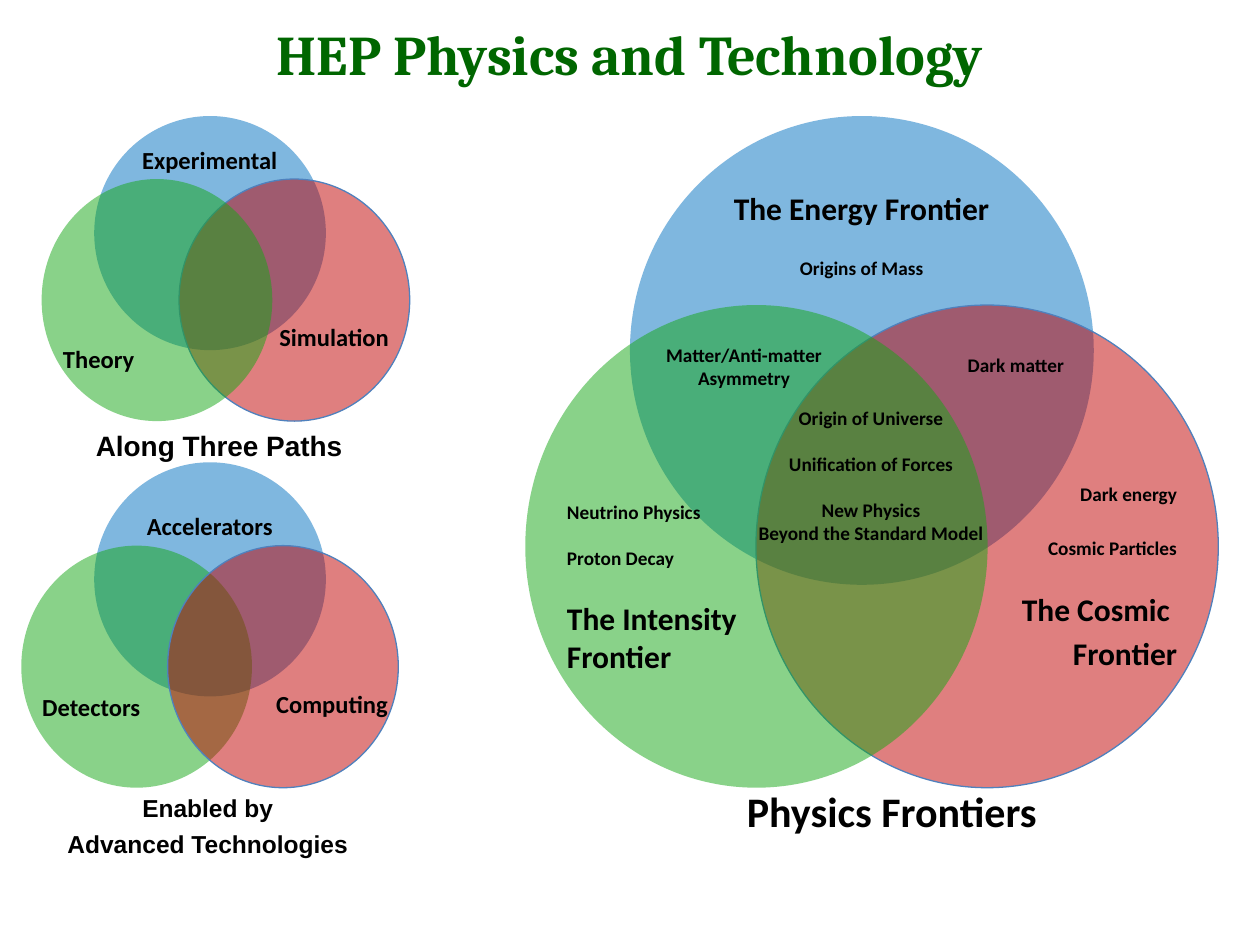
from dataclasses import dataclass

import lxml.etree
import pptx
import pptx.dml.color
import pptx.enum.shapes
import pptx.enum.text
import pptx.oxml.ns
import pptx.util

Cm = pptx.util.Cm
Pt = pptx.util.Pt
Align = pptx.enum.text.PP_ALIGN

BLUE, RED, GREEN = "0070C0", "C00000", "15A715"
BLACK, WHITE, OUTLINE, TITLE_GREEN = "000000", "FFFFFF", "4F81BD", "006600"


@dataclass
class Circle:
    color: str
    left: float
    top: float


@dataclass
class Venn:
    blue_size: tuple[float, float]
    other_size: tuple[float, float]
    circles: list[Circle]


@dataclass
class Line:
    text: str
    size: float
    before: float = 0


@dataclass
class Label:
    x: float
    middle: float
    width: float
    height: float
    lines: list[Line]
    align: Align = Align.CENTER
    font: str = "Calibri"
    color: str = BLACK


SMALL = ((4.67, 4.72), (4.65, 4.88))
LARGE = ((9.35, 9.45), (9.32, 9.73))

VENNS = [
    Venn(*LARGE, [Circle(BLUE, 12.7, 2.34), Circle(RED, 15.24, 6.15), Circle(GREEN, 10.59, 6.15)]),
    Venn(*SMALL, [Circle(BLUE, 1.9, 2.34), Circle(RED, 3.61, 3.61), Circle(GREEN, 0.84, 3.61)]),
    Venn(*SMALL, [Circle(BLUE, 1.9, 9.32), Circle(GREEN, 0.43, 11), Circle(RED, 3.38, 11)]),
]

LABELS = [
    Label(12.7, 1.07, 25.4, 2.13, [Line("HEP Physics and Technology", 32)],
          font="Cambria", color=TITLE_GREEN),
    Label(17.37, 4.72, 6.86, 2, [Line("The Energy Frontier", 18), Line("Origins of Mass", 11, 16.5)]),
    Label(15, 7.39, 3.76, 1.2, [Line("Matter/Anti-matter", 11), Line("Asymmetry", 11)]),
    Label(20.48, 7.36, 2.49, 0.74, [Line("Dark matter", 11)]),
    Label(17.56, 9.59, 5.08, 3.07, [
        Line("Origin of Universe", 11),
        Line("Unification of Forces", 11, 13),
        Line("New Physics", 11, 13),
        Line("Beyond the Standard Model", 11),
    ]),
    Label(11.43, 11.85, 5.49, 3.6, [
        Line("Neutrino Physics", 11),
        Line("Proton Decay", 11, 13),
        Line("The Intensity", 18, 17),
        Line("Frontier", 18),
    ], Align.LEFT),
    Label(23.73, 11.63, 6.58, 4, [
        Line("Dark energy", 11),
        Line("Cosmic Particles", 11, 18),
        Line("The Cosmic ", 18, 17.5),
        Line("Frontier", 18, 3.5),
    ], Align.RIGHT),
    Label(17.98, 16.35, 8.46, 1.27, [Line("Physics Frontiers", 24)]),
    Label(4.23, 3.21, 3.43, 0.8, [Line("Experimental", 14)]),
    Label(1.27, 7.24, 2.74, 0.8, [Line("Theory", 14)], Align.LEFT),
    Label(7.84, 6.79, 3.3, 0.8, [Line("Simulation", 14)], Align.RIGHT),
    Label(4.42, 8.97, 5.54, 0.94, [Line("Along Three Paths", 16)], font="Arial"),
    Label(4.23, 10.6, 3.43, 0.8, [Line("Accelerators", 14)]),
    Label(0.85, 14.25, 2.74, 0.8, [Line("Detectors", 14)], Align.LEFT),
    Label(7.82, 14.19, 3.48, 0.8, [Line("Computing", 14)], Align.RIGHT),
    Label(4.19, 16.65, 7, 1.52, [Line("Enabled by", 14), Line("Advanced Technologies", 14, 3.5)],
          font="Arial"),
]


def paint(target, color: str, opacity: int = 100) -> None:
    target.solid()
    target.fore_color.rgb = pptx.dml.color.RGBColor.from_string(color)
    if opacity < 100:
        for node in target._xPr.iter(pptx.oxml.ns.qn("a:srgbClr")):
            alpha = lxml.etree.SubElement(node, pptx.oxml.ns.qn("a:alpha"))
            alpha.set("val", str(opacity * 1000))


def draw_venn(page, venn: Venn) -> None:
    for circle in venn.circles:
        width, height = venn.blue_size if circle.color == BLUE else venn.other_size
        shape = page.shapes.add_shape(
            pptx.enum.shapes.MSO_SHAPE.OVAL,
            Cm(circle.left), Cm(circle.top), Cm(width), Cm(height),
        )
        shape.shadow.inherit = False
        paint(shape.fill, circle.color, 50)
        if circle.color == BLUE:
            shape.line.width = Pt(2)
            paint(shape.line.fill, WHITE, 0)
        elif circle.color == RED:
            shape.line.width = Pt(0)
            paint(shape.line.fill, OUTLINE)
        else:
            shape.line.fill.background()


def draw_label(page, label: Label) -> None:
    shift = {Align.LEFT: 0, Align.CENTER: 0.5, Align.RIGHT: 1}[label.align]
    box = page.shapes.add_textbox(
        Cm(label.x - shift * label.width), Cm(label.middle - label.height / 2),
        Cm(label.width), Cm(label.height),
    )
    frame = box.text_frame
    frame.word_wrap = True
    frame.vertical_anchor = pptx.enum.text.MSO_ANCHOR.MIDDLE
    frame.margin_left = frame.margin_right = frame.margin_top = frame.margin_bottom = 0
    for index, line in enumerate(label.lines):
        para = frame.add_paragraph() if index else frame.paragraphs[0]
        para.alignment = label.align
        if line.before:
            para.space_before = Pt(line.before)
        span = para.add_run()
        span.text = line.text
        span.font.name = label.font
        span.font.size = Pt(line.size)
        span.font.bold = True
        paint(span.font.fill, label.color)


def main() -> None:
    deck = pptx.Presentation()
    deck.slide_width, deck.slide_height = Cm(25.4), Cm(19.05)
    page = deck.slides.add_slide(deck.slide_layouts[6])
    for venn in VENNS:
        draw_venn(page, venn)
    for label in LABELS:
        draw_label(page, label)
    deck.save("out.pptx")


if __name__ == "__main__":
    main()
